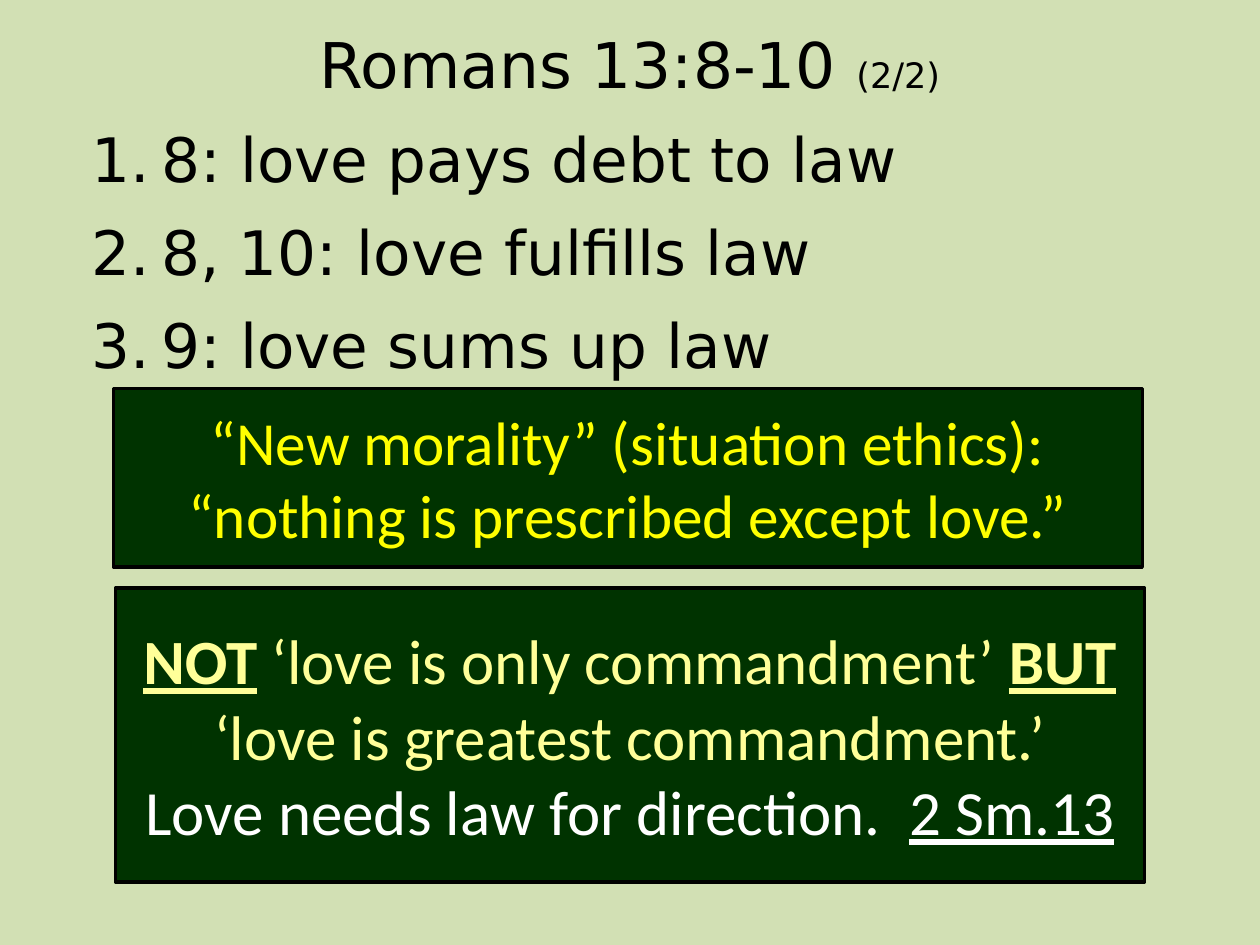
from lxml import etree
from pptx import Presentation
from pptx.dml.color import RGBColor
from pptx.enum.shapes import MSO_SHAPE
from pptx.enum.text import MSO_ANCHOR, MSO_AUTO_SIZE, PP_ALIGN
from pptx.oxml.ns import qn
from pptx.util import Pt

RECT = MSO_SHAPE.RECTANGLE
CENTER, LEFT = PP_ALIGN.CENTER, PP_ALIGN.LEFT
MIDDLE, TOP = MSO_ANCHOR.MIDDLE, MSO_ANCHOR.TOP
NO_FIT = MSO_AUTO_SIZE.NONE

COLORS = {
    "background": "D2E0B4",
    "text": "000000",
    "panel": "003300",
    "quote": "FFFF00",
    "contrast": "FFFF99",
    "direction": "FFFFFF",
}
HEAD_FONT, PANEL_FONT = "DejaVu Sans", "Calibri"


def rgb(name):
    return RGBColor.from_string(COLORS[name])


def set_frame(tf, anchor):
    tf.word_wrap = True
    tf.auto_size = NO_FIT
    tf.vertical_anchor = anchor


def style_paragraph(p, font, size, color, align):
    p.alignment = align
    p.font.name = font
    p.font.size = Pt(size)
    p.font.color.rgb = rgb(color)


def add_title(slide, box, text, part):
    title = slide.shapes.title
    title.left, title.top, title.width, title.height = map(Pt, box)
    set_frame(title.text_frame, MIDDLE)
    p = title.text_frame.paragraphs[0]
    style_paragraph(p, HEAD_FONT, 36, "text", CENTER)
    p.add_run().text = text
    r = p.add_run()
    r.text = part
    r.font.size = Pt(20)


def add_numbered_list(slide, box, items):
    tf = slide.shapes.add_textbox(*map(Pt, box)).text_frame
    set_frame(tf, TOP)
    for i, item in enumerate(items):
        p = tf.add_paragraph() if i else tf.paragraphs[0]
        p.text = item
        style_paragraph(p, HEAD_FONT, 35, "text", LEFT)
        p.space_before, p.space_after = Pt(1), Pt(10)
        # Automatic number with a hanging indent
        pPr = p._p.get_or_add_pPr()
        pPr.set("marL", str(Pt(40)))
        pPr.set("indent", str(-Pt(40)))
        number = etree.Element(qn("a:buAutoNum"), type="arabicPeriod")
        pPr.find(qn("a:defRPr")).addprevious(number)


def add_panel(slide, box, size, paragraphs):
    """Each paragraph is (color, [(text, bold, underline), ...])."""
    sp = slide.shapes.add_shape(RECT, *map(Pt, box))
    sp.shadow.inherit = False
    sp.fill.solid()
    sp.fill.fore_color.rgb = rgb("panel")
    sp.line.color.rgb = rgb("text")
    sp.line.width = Pt(2)
    tf = sp.text_frame
    set_frame(tf, MIDDLE)
    for i, (color, runs) in enumerate(paragraphs):
        p = tf.add_paragraph() if i else tf.paragraphs[0]
        style_paragraph(p, PANEL_FONT, size, color, CENTER)
        for text, bold, underline in runs:
            r = p.add_run()
            r.text = text
            r.font.bold, r.font.underline = bold, underline


def main():
    prs = Presentation()
    prs.slide_width, prs.slide_height = Pt(720), Pt(540)
    slide = prs.slides.add_slide(prs.slide_layouts[5])
    slide.background.fill.solid()
    slide.background.fill.fore_color.rgb = rgb("background")

    # Heading and main points
    add_title(slide, (54, 6, 612, 60), "Romans 13:8-10 ", "(2/2)")
    add_numbered_list(slide, (45, 66, 630, 456), [
        "8: love pays debt to law",
        "8, 10: love fulfills law",
        "9: love sums up law",
    ])

    # Claim and answer
    add_panel(slide, (64.8, 222, 588, 102), 35, [
        ("quote", [("“New morality” (situation ethics): "
                    "“nothing is prescribed except love.”", False, False)]),
    ])
    add_panel(slide, (66, 336, 588, 168), 36, [
        ("contrast", [
            ("NOT", True, True),
            (" ‘love is only commandment’ ", False, False),
            ("BUT", True, True),
            (" ‘love is greatest commandment.’", False, False),
        ]),
        ("direction", [
            ("Love needs law for direction.  ", False, False),
            ("2 Sm.13", False, True),
        ]),
    ])
    prs.save("out.pptx")


if __name__ == "__main__":
    main()
